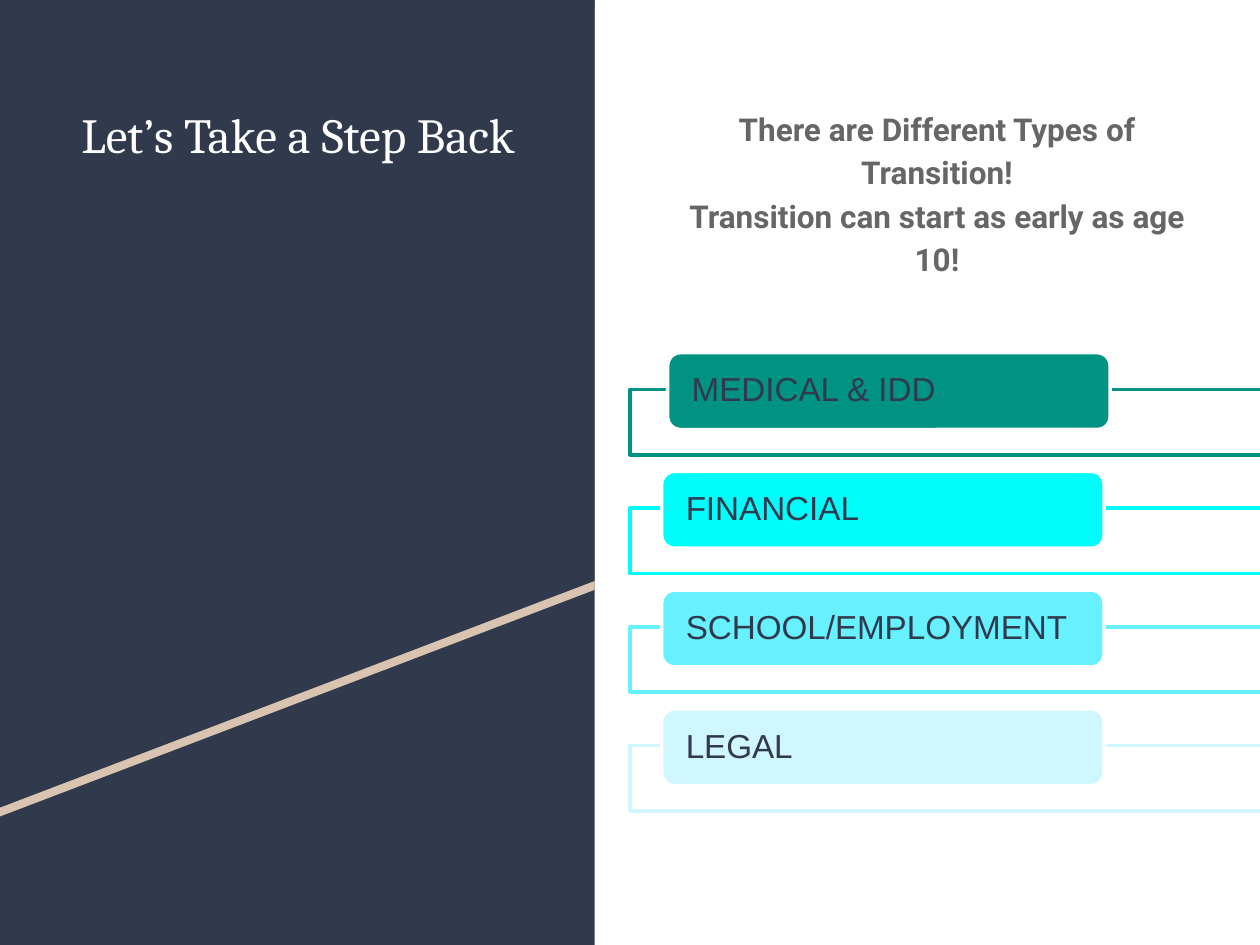
from dataclasses import dataclass

from lxml.etree import SubElement
from pptx import Presentation
from pptx.dml.color import RGBColor
from pptx.enum.shapes import MSO_SHAPE
from pptx.enum.text import MSO_ANCHOR, MSO_AUTO_SIZE, PP_ALIGN
from pptx.oxml.ns import qn
from pptx.util import Cm, Pt


@dataclass(frozen=True)
class Theme:
    navy: str = "31394D"
    sand: str = "D9C4B1"
    white: str = "FFFFFF"
    grey: str = "666666"
    rows: tuple = ("009384", "00FCFB", "67F1FF", "D0F6FF")
    title_size: float = 28
    body_size: float = 18
    label_size: float = 19
    line_width: float = 2


THEME = Theme()
TITLE = "Let’s Take a Step Back"
MESSAGES = ["There are Different Types of Transition!",
            "Transition can start as early as age 10!"]
LABELS = ["MEDICAL & IDD", "FINANCIAL", "SCHOOL/EMPLOYMENT", "LEGAL"]


def set_values(target, values):
    for name, value in values.items():
        setattr(target, name, value)


def paint(shape, fill, line=None):
    """Give a shape a flat fill and an optional outline."""
    shape.shadow.inherit = False
    shape.fill.solid()
    shape.fill.fore_color.rgb = RGBColor.from_string(fill)
    if line:
        shape.line.color.rgb = RGBColor.from_string(line)
        shape.line.width = Pt(THEME.line_width)
    else:
        shape.line.fill.background()


def write(frame, lines, font, color, frame_format, para_format):
    set_values(frame, {"word_wrap": True, "auto_size": MSO_AUTO_SIZE.NONE, **frame_format})
    for index, line in enumerate(lines):
        para = frame.paragraphs[0] if index == 0 else frame.add_paragraph()
        set_values(para, para_format)
        span = para.add_run()
        span.text = line
        set_values(span.font, font)
        span.font.color.rgb = RGBColor.from_string(color)


def fill_placeholder(page, holder, box, lines, font, color, para_format):
    page.shapes._spTree.append(holder._element)  # bring in front of the panel
    set_values(holder, dict(zip(("left", "top", "width", "height"), map(Cm, box))))
    margins = {f"margin_{side}": Cm(0.25) for side in ("left", "top", "right", "bottom")}
    write(holder.text_frame, lines, font, color,
          {"vertical_anchor": MSO_ANCHOR.TOP, **margins},
          {"alignment": PP_ALIGN.CENTER, "space_before": Pt(0), **para_format})


def add_panel(page, box):
    """Draw the dark panel crossed by a rising sand-coloured band."""
    left, top, width, height = box
    panel = page.shapes.add_shape(MSO_SHAPE.RECTANGLE, *map(Cm, box))
    paint(panel, THEME.navy)
    for start, right_end, left_end, color in (
            (0.15, 11.89, 16.46, THEME.sand), (0, 11.71, 16.28, THEME.navy)):
        builder = page.shapes.build_freeform(Cm(left), Cm(top + start))
        builder.add_line_segments([(Cm(left + width), Cm(top + start)),
                                   (Cm(left + width), Cm(top + right_end)),
                                   (Cm(left), Cm(top + left_end))])
        paint(builder.convert_to_shape(), color)


def add_title(page, box):
    font = {"name": "Cambria", "size": Pt(THEME.title_size)}
    fill_placeholder(page, page.shapes.title, box, [TITLE], font, THEME.white, {})


def add_messages(page, box):
    holder = page.placeholders[1]
    font = {"name": "Roboto", "size": Pt(THEME.body_size), "bold": True}
    fill_placeholder(page, holder, box, MESSAGES, font, THEME.grey, {"line_spacing": 1.15})
    for para in holder.text_frame.paragraphs:
        properties = para._p.get_or_add_pPr()
        properties.set("marL", str(Cm(0.4)))
        properties.set("indent", "0")
        SubElement(properties, qn("a:buNone"))


def add_row(page, box, label, color, label_indent):
    """Draw an outlined frame with a rounded label over its top edge."""
    left, top, width, height = box
    frame = page.shapes.add_shape(MSO_SHAPE.RECTANGLE, *map(Cm, box))
    paint(frame, THEME.white, color)
    alpha = SubElement(frame.fill._xPr.find(qn("a:solidFill"))[0], qn("a:alpha"))
    alpha.set("val", "90000")

    tab = page.shapes.add_shape(MSO_SHAPE.ROUNDED_RECTANGLE, Cm(left + label_indent),
                                Cm(top - 0.74), Cm(8.92), Cm(1.55))
    paint(tab, color, THEME.white)
    write(tab.text_frame, [label], {"name": "Arial", "size": Pt(THEME.label_size)},
          THEME.navy,
          {"vertical_anchor": MSO_ANCHOR.MIDDLE, "margin_left": Cm(0.41),
           "margin_right": Cm(0.41), "margin_top": 0, "margin_bottom": 0},
          {"alignment": PP_ALIGN.LEFT, "line_spacing": 0.9})


def add_type_list(page, box):
    left, top, width, height = box
    row_height = 1.32
    pitch = (height - row_height) / (len(LABELS) - 1)
    for index, (label, color) in enumerate(zip(LABELS, THEME.rows)):
        label_indent = 0.76 if index == 0 else 0.64
        add_row(page, (left, top + index * pitch, width, row_height),
                label, color, label_indent)


def main():
    deck = Presentation()
    set_values(deck, {"slide_width": Cm(25.4), "slide_height": Cm(19.05)})
    page = deck.slides.add_slide(deck.slide_layouts[1])
    add_panel(page, (0, 0, 11.99, 19.05))
    add_title(page, (0.86, 1.85, 10.29, 9.3))
    add_messages(page, (12.9, 1.85, 11.58, 15.19))
    add_type_list(page, (12.7, 7.85, 12.73, 8.5))
    deck.save("out.pptx")


if __name__ == "__main__":
    main()
